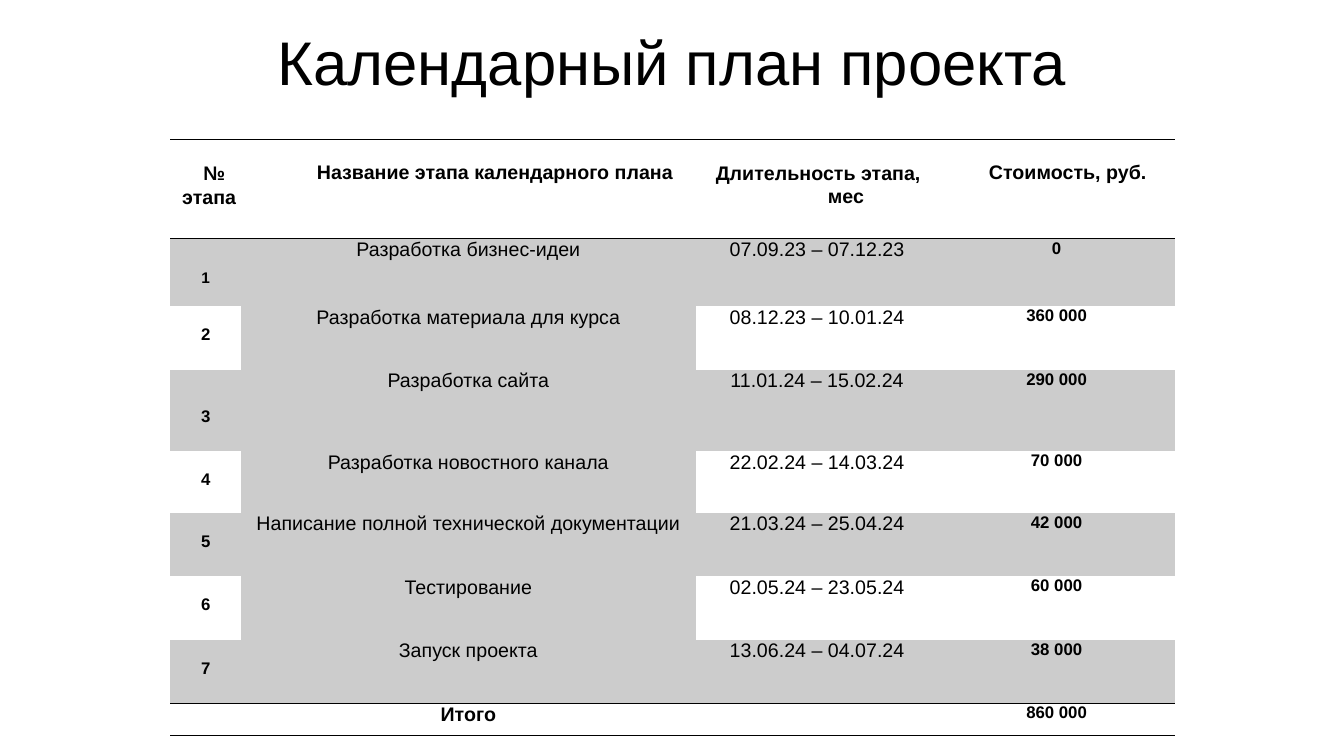
from pptx import Presentation
from pptx.util import Inches, Pt
from pptx.dml.color import RGBColor
from pptx.enum.text import PP_ALIGN, MSO_ANCHOR
from pptx.oxml import parse_xml
from pptx.oxml.ns import nsdecls, qn

PLAIN = "{2D5ABB26-0587-4C30-8999-92F81FD0307C}"  # no style, no grid


def paint(fill, tone):
    fill.solid()
    fill.fore_color.rgb = RGBColor.from_string(tone)


def write(frame, text, size, bold=False):
    """Fill a frame with one centred paragraph in Arial and return it."""
    frame.text = text
    line = frame.paragraphs[0]
    line.alignment = PP_ALIGN.CENTER
    for run in line.runs:
        run.font.name = "Arial"
        run.font.size = Pt(size)
        run.font.bold = bold
        paint(run.font.fill, "000000")
    return line


deck = Presentation()
deck.slide_width, deck.slide_height = Inches(13.33), Inches(7.5)
slide = deck.slides.add_slide(deck.slide_layouts[5])

title = slide.shapes.title
title.left, title.top = Inches(0.92), Inches(0.16)
title.width, title.height = Inches(11.5), Inches(0.99)
frame = title.text_frame
frame.margin_left = frame.margin_right = frame.margin_top = frame.margin_bottom = 0
frame.vertical_anchor = MSO_ANCHOR.MIDDLE
write(frame, "Календарный план проекта", 44).line_spacing = 0.9

rows = [
    ("№ этапа", "Название этапа календарного плана", "Длительность этапа, мес", "Стоимость, руб."),
    ("1", "Разработка бизнес-идеи", "07.09.23 – 07.12.23", "0"),
    ("2", "Разработка материала для курса", "08.12.23 – 10.01.24", "360 000"),
    ("3", "Разработка сайта", "11.01.24 – 15.02.24", "290 000"),
    ("4", "Разработка новостного канала", "22.02.24 – 14.03.24", "70 000"),
    ("5", "Написание полной технической документации", "21.03.24 – 25.04.24", "42 000"),
    ("6", "Тестирование", "02.05.24 – 23.05.24", "60 000"),
    ("7", "Запуск проекта", "13.06.24 – 04.07.24", "38 000"),
    ("", "Итого", "", "860 000"),
]
widths = [0.7, 4.51, 2.41, 2.34]
heights = [0.99, 0.67, 0.63, 0.81, 0.61, 0.63, 0.63, 0.63, 0.32]
drops = [0.22, 0.3, 0.19, 0.37, 0.19, 0.19, 0.19, 0.19, 0]  # text offset in column one
heads = [(0.07, 0.1, 1.07), (0.53, 0, 1), (0.57, -0.55, 1.05), (0.22, 0, 1)]
last = len(rows) - 1

table = slide.shapes.add_table(
    len(rows), len(widths), Inches(1.69), Inches(1.38),
    Inches(sum(widths)), Inches(sum(heights))).table
table.first_row = table.horz_banding = False
table._tbl.tblPr.find(qn("a:tableStyleId")).text = PLAIN
for col, width in zip(table.columns, widths):
    col.width = Inches(width)

for r, row in enumerate(rows):
    table.rows[r].height = Inches(heights[r])
    edge = r in (0, last)
    for c, text in enumerate(row):
        cell = table.cell(r, c)
        cell.margin_left = cell.margin_right = cell.margin_bottom = 0
        cell.margin_top = Inches(drops[r] if c == 0 or r == 0 else 0)
        size = 14 if r == 0 or c in (1, 2) else 11 if (r, c) == (1, 0) else 12
        line = write(cell.text_frame, text, size, edge or c in (0, 3))
        if not text:
            line.font.size = Pt(12)
        if r == 0:
            left, first, space = heads[c]
            props = line._p.get_or_add_pPr()
            props.set("marL", str(Inches(left)))
            props.set("indent", str(Inches(first)))
            line.line_spacing = space
        if edge:
            for side in ("lnT", "lnB"):
                cell._tc.get_or_add_tcPr().append(parse_xml(
                    f'<a:{side} {nsdecls("a")} w="12700"><a:solidFill>'
                    f'<a:srgbClr val="000000"/></a:solidFill></a:{side}>'))
        if not edge and (r % 2 or c == 1):
            paint(cell.fill, "CCCCCC")
        else:
            cell.fill.background()

deck.save("out.pptx")
